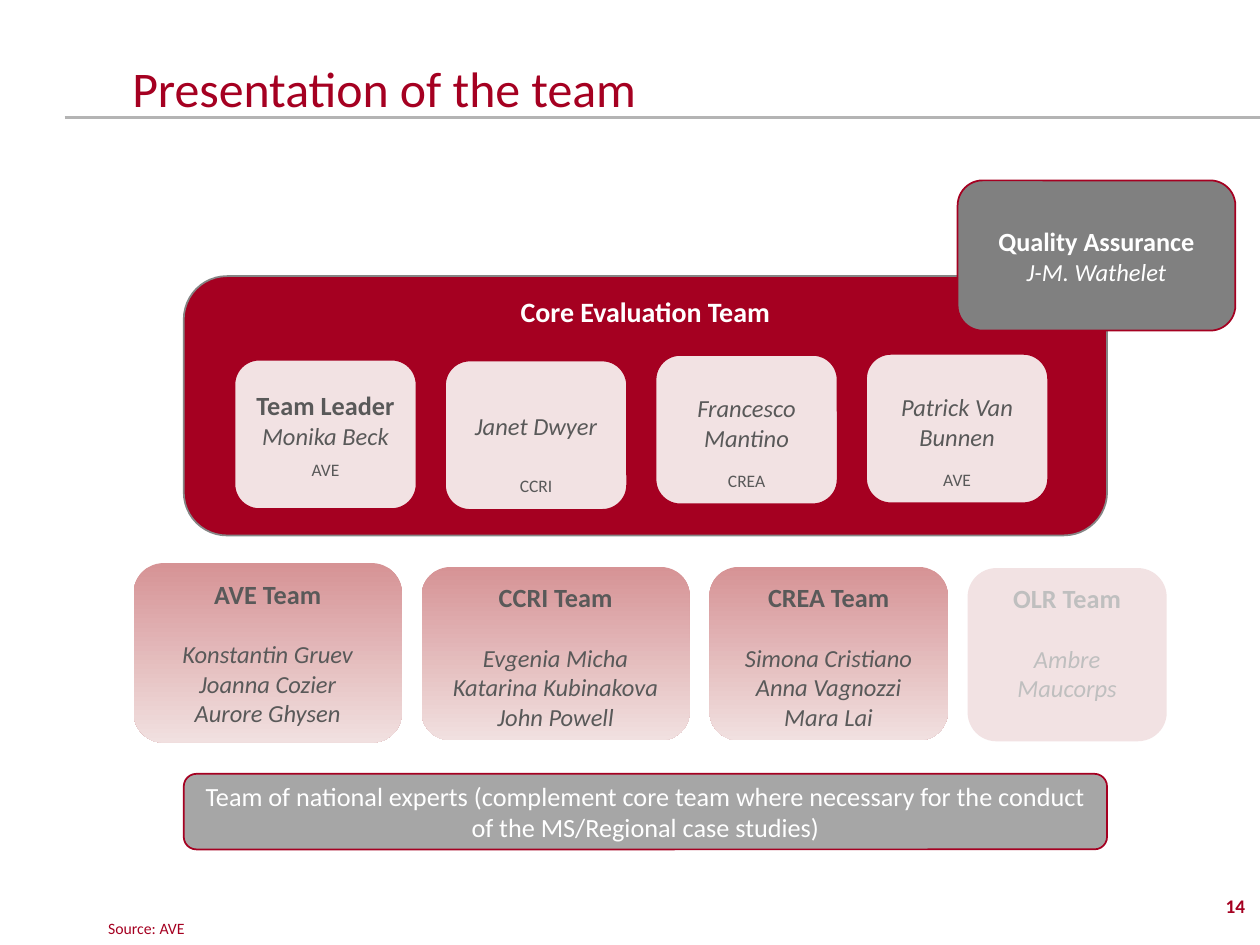
from lxml.etree import SubElement
from pptx import Presentation
from pptx.dml.color import RGBColor
from pptx.enum.shapes import MSO_CONNECTOR as Connector, MSO_SHAPE as Shape
from pptx.enum.text import MSO_ANCHOR as Anchor, PP_ALIGN as Align
from pptx.oxml.ns import qn
from pptx.util import Pt

RED, PINK, DARK, PALE, WHITE = "A50021", "F2E2E3", "595959", "BFBFBF", "FFFFFF"
HEAD = {"size": Pt(15), "bold": True}
CORE_HEAD = {"size": Pt(16), "bold": True}
PERSON = {"size": Pt(14), "italic": True}
FIRM = {"size": Pt(10)}
PLAIN = {"size": Pt(15)}
SOURCE = {"size": Pt(9)}
NUMBER = {"size": Pt(11), "bold": True}
TITLE = {"size": Pt(28.5)}

EXPERTS = [("Team of national experts (complement core team where necessary "
            "for the conduct of the MS/Regional case studies)", PLAIN, 0)]
CORE = [("Core Evaluation Team", CORE_HEAD, 0)]
QUALITY = [("Quality Assurance", HEAD, 0), ("J-M. Wathelet", PERSON, 0)]
MEMBERS = [
    (205.5, Anchor.MIDDLE, [("Team Leader", HEAD, 0), ("Monika Beck", PERSON, 0), ("AVE", FIRM, 5)]),
    (206, Anchor.BOTTOM, [("Janet Dwyer", PERSON, 0), ("CCRI", FIRM, 20)]),
    (202.8, Anchor.BOTTOM, [("Francesco Mantino", PERSON, 0), ("CREA", FIRM, 10)]),
    (202.2, Anchor.BOTTOM, [("Patrick Van Bunnen", PERSON, 0), ("AVE", FIRM, 10)]),
]
TEAMS = [
    ("AVE Team", ["Konstantin Gruev", "Joanna Cozier", "Aurore Ghysen"], 321.8, 153.3, 102.6, DARK),
    ("CCRI Team", ["Evgenia Micha", "Katarina Kubinakova", "John Powell"], 324, 153.3, 99, DARK),
    ("CREA Team", ["Simona Cristiano", "Anna Vagnozzi", "Mara Lai"], 324, 136.3, 99, DARK),
    ("OLR Team", ["Ambre Maucorps"], 324.6, 113.8, 99, PALE),
]
MEMBER_LEFT, MEMBER_STEP = 134, 120.3
TEAM_LEFT, TEAM_GAP = 76.4, 11.2


def rgb(value):
    """Turn a hex string into a colour."""
    return RGBColor.from_string(value)


def write(holder, lines, color, anchor, align):
    """Write (text, format, space before) lines into a shape."""
    frame = holder.text_frame
    frame.word_wrap = True
    frame.vertical_anchor = anchor
    for index, (text, style, gap) in enumerate(lines):
        paragraph = frame.add_paragraph() if index else frame.paragraphs[0]
        paragraph.alignment = align
        paragraph.space_before = Pt(gap)
        run = paragraph.add_run()
        run.text = text
        for key, value in {"name": "Calibri", **style}.items():
            setattr(run.font, key, value)
        run.font.color.rgb = rgb(color)


def add_box(slide, place, lines, fill, color=WHITE, outline=None, anchor=Anchor.MIDDLE):
    """Add a rounded box; a pair of fill colours makes a gradient."""
    box = slide.shapes.add_shape(Shape.ROUNDED_RECTANGLE, *map(Pt, place))
    box.shadow.inherit = False
    if isinstance(fill, tuple):
        box.fill.gradient()
        box.fill.gradient_angle = 270
        for stop, shade in zip(box.fill.gradient_stops, fill):
            stop.color.rgb = rgb(shade)
    else:
        box.fill.solid()
        box.fill.fore_color.rgb = rgb(fill)
    if outline:
        box.line.color.rgb = rgb(outline)
        box.line.width = Pt(1)
    else:
        box.line.fill.background()
    write(box, lines, color, anchor, Align.CENTER)


def add_heading(slide):
    """Place the title, its rule, the source and the page number."""
    title = slide.shapes.title
    for side, value in {"left": 68.4, "top": 0, "width": 653.8, "height": 71.3}.items():
        setattr(title, side, Pt(value))
    write(title, [("Presentation of the team", TITLE, 0)], RED, Anchor.BOTTOM, Align.LEFT)
    title.text_frame.paragraphs[0].line_spacing = 0.9
    rule = slide.shapes.add_connector(Connector.STRAIGHT, Pt(37), Pt(67), Pt(720), Pt(67))
    rule.line.color.rgb = rgb("B4B4B4")
    rule.line.width = Pt(1.5)
    SubElement(rule._element.spPr, qn("a:effectLst"))
    for text, style, place, align in (
        ("Source: AVE", SOURCE, (54.7, 510.5, 339, 28.8), Align.LEFT),
        ("14", NUMBER, (556.6, 499, 162, 28.8), Align.RIGHT),
    ):
        label = slide.shapes.add_textbox(*map(Pt, place))
        write(label, [(text, style, 0)], RED, Anchor.BOTTOM, align)


def main():
    """Build the team slide."""
    deck = Presentation()
    deck.slide_width, deck.slide_height = Pt(720), Pt(540)
    slide = deck.slides.add_slide(deck.slide_layouts[5])
    add_heading(slide)
    add_box(slide, (105, 442.2, 527.6, 43.2), EXPERTS, "A6A6A6", outline=RED)
    add_box(slide, (105, 157.8, 527.6, 148.2), CORE, RED, outline="858585", anchor=Anchor.TOP)
    for index, (top, anchor, lines) in enumerate(MEMBERS):
        place = (MEMBER_LEFT + index * MEMBER_STEP, top, 104.1, 85.4)
        add_box(slide, place, lines, PINK, DARK, RED, anchor)
    add_box(slide, (547.2, 103.1, 158.7, 85.8), QUALITY, "808080", outline=RED)
    left = TEAM_LEFT
    for name, people, top, width, height, color in TEAMS:
        lines = [(name, HEAD, 0)]
        lines += [(person, PERSON, 0 if index else 17) for index, person in enumerate(people)]
        fill = PINK if color == PALE else ("D69395", "F1E0E0")
        add_box(slide, (left, top, width, height), lines, fill, color, anchor=Anchor.TOP)
        left += width + TEAM_GAP
    deck.save("out.pptx")


if __name__ == "__main__":
    main()
